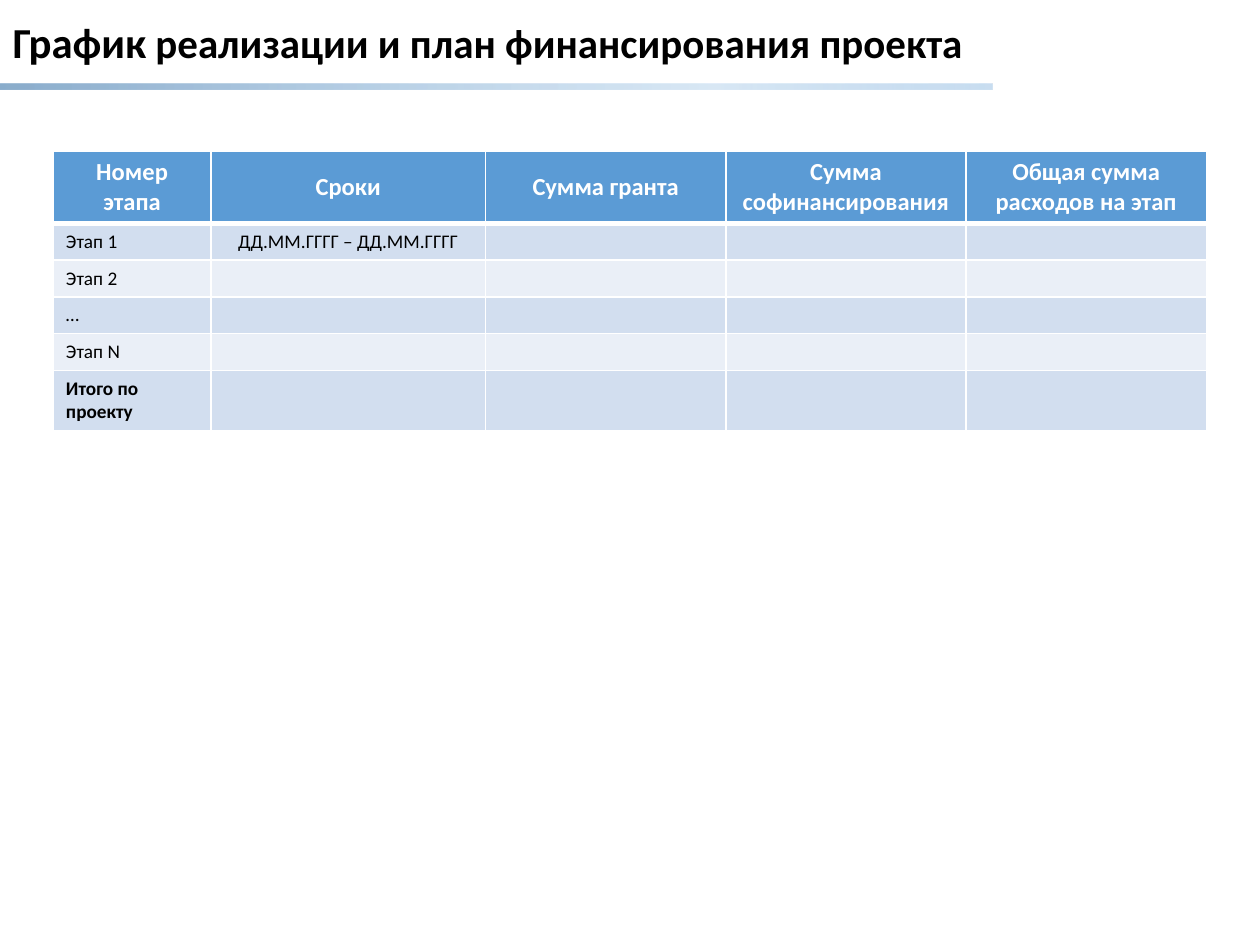
from dataclasses import dataclass

from lxml.etree import SubElement
from pptx import Presentation
from pptx.dml.color import RGBColor
from pptx.enum.shapes import MSO_SHAPE
from pptx.enum.text import MSO_ANCHOR, MSO_AUTO_SIZE, PP_ALIGN
from pptx.oxml.ns import qn
from pptx.util import Pt


@dataclass(frozen=True)
class Theme:
    font: str = "Calibri"
    black: str = "000000"
    white: str = "FFFFFF"
    header: str = "5B9BD5"
    bands: tuple = ("D2DEEF", "EAEFF7")
    # Position %, colour, opacity %
    rule: tuple = ((0, "2A69A2", 55), (72, "66A2D8", 25), (100, "9DC3E6", 55))
    title_first: float = 24.4
    title_rest: float = 23.4
    header_size: float = 14
    body_size: float = 11


@dataclass(frozen=True)
class CellStyle:
    fill: str
    color: str
    size: float
    bold: bool
    align: PP_ALIGN
    bottom: float = 1


THEME = Theme()
HEADERS = ("Номер этапа", "Сроки", "Сумма гранта",
           "Сумма софинансирования", "Общая сумма расходов на этап")
STAGES = (("Этап 1", "ДД.ММ.ГГГГ – ДД.ММ.ГГГГ"), ("Этап 2",), ("…",),
          ("Этап N",), ("Итого по проекту",))
COLUMN_WIDTHS = (90, 157, 137.3, 137.3, 137.3)
ROW_HEIGHTS = (41, 21, 21, 21, 21, 34)


def add_span(para, text: str, size: float, color: str, bold: bool) -> None:
    span = para.add_run()
    span.text = text
    span.font.name = THEME.font
    span.font.size = Pt(size)
    span.font.bold = bold
    span.font.color.rgb = RGBColor.from_string(color)


def add_title(page) -> None:
    box = page.shapes.title
    box.left, box.top, box.width, box.height = Pt(0), Pt(0), Pt(720), Pt(51)
    frame = box.text_frame
    frame.word_wrap = True
    frame.auto_size = MSO_AUTO_SIZE.NONE
    frame.vertical_anchor = MSO_ANCHOR.MIDDLE
    para = frame.paragraphs[0]
    para.alignment = PP_ALIGN.LEFT
    para.line_spacing = 0.9
    add_span(para, "График", THEME.title_first, THEME.black, True)
    add_span(para, " реализации и план финансирования проекта",
             THEME.title_rest, THEME.black, True)


def add_title_rule(page) -> None:
    rule = page.shapes.add_shape(MSO_SHAPE.ROUNDED_RECTANGLE,
                                 Pt(0), Pt(48), Pt(567), Pt(3.2))
    rule.shadow.inherit = False
    rule.line.fill.background()
    rule.fill.gradient()
    rule.fill.gradient_angle = 0
    stops = rule.fill._fill._gradFill.find(qn("a:gsLst"))
    for stop in list(stops):
        stops.remove(stop)
    for position, color, opacity in THEME.rule:
        stop = SubElement(stops, qn("a:gs"), pos=str(position * 1000))
        tone = SubElement(stop, qn("a:srgbClr"), val=color)
        SubElement(tone, qn("a:alpha"), val=str(opacity * 1000))


def set_borders(cell, bottom: float, top: float) -> None:
    properties = cell._tc.get_or_add_tcPr()
    widths = {"a:lnL": 1, "a:lnR": 1, "a:lnT": top, "a:lnB": bottom}
    for index, (side, width) in enumerate(widths.items()):
        line = SubElement(properties, qn(side), w=str(int(Pt(width))))
        fill = SubElement(line, qn("a:solidFill"))
        SubElement(fill, qn("a:srgbClr"), val=THEME.white)
        properties.insert(index, line)  # borders come before the fill


def format_cell(cell, text: str, style: CellStyle, top: float) -> None:
    cell.fill.solid()
    cell.fill.fore_color.rgb = RGBColor.from_string(style.fill)
    cell.vertical_anchor = MSO_ANCHOR.MIDDLE
    set_borders(cell, style.bottom, top)
    para = cell.text_frame.paragraphs[0]
    para.alignment = style.align
    if text:
        add_span(para, text, style.size, style.color, style.bold)
    else:
        # Keeps an empty cell from stretching its row
        SubElement(para._p, qn("a:endParaRPr"), sz=str(int(style.size * 100)))


def add_plan_table(page) -> None:
    rows = (HEADERS, *STAGES)
    table = page.shapes.add_table(len(rows), len(HEADERS), Pt(30.5), Pt(86.4),
                                  Pt(sum(COLUMN_WIDTHS)),
                                  Pt(sum(ROW_HEIGHTS))).table
    for column, width in zip(table.columns, COLUMN_WIDTHS):
        column.width = Pt(width)
    for row, height in zip(table.rows, ROW_HEIGHTS):
        row.height = Pt(height)

    header = CellStyle(THEME.header, THEME.white, THEME.header_size, True,
                       PP_ALIGN.CENTER, bottom=3)
    for r, texts in enumerate(rows):
        for c in range(len(HEADERS)):
            style = header if r == 0 else CellStyle(
                THEME.bands[(r - 1) % 2], THEME.black, THEME.body_size,
                r == len(rows) - 1, PP_ALIGN.CENTER if c else PP_ALIGN.LEFT)
            text = texts[c] if c < len(texts) else ""
            format_cell(table.cell(r, c), text, style, top=3 if r == 1 else 1)


def main() -> None:
    deck = Presentation()
    deck.slide_width, deck.slide_height = Pt(720), Pt(540)
    page = deck.slides.add_slide(deck.slide_layouts[5])  # title only
    add_title(page)
    add_title_rule(page)
    add_plan_table(page)
    deck.save("out.pptx")


if __name__ == "__main__":
    main()
